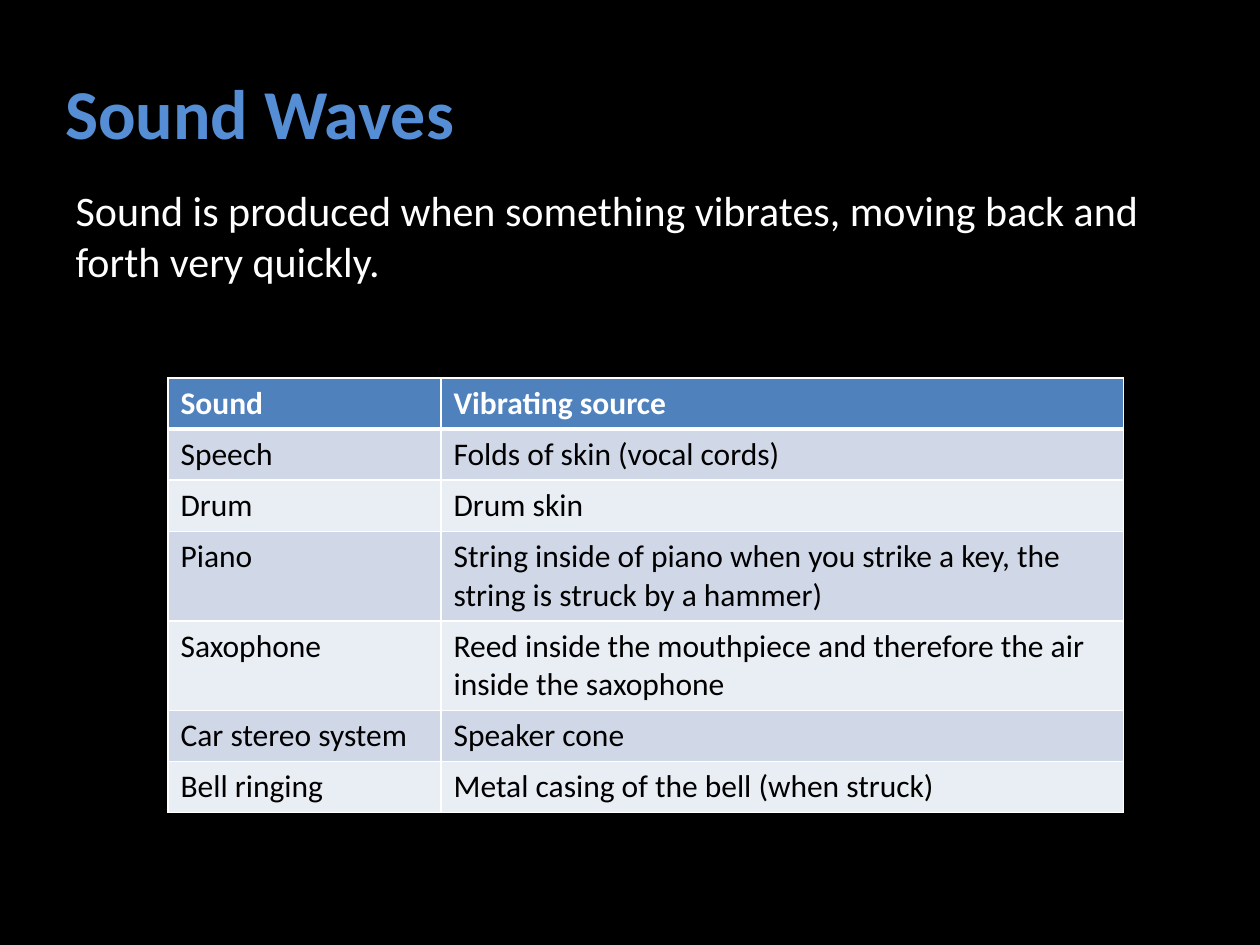
"""Build the slide on sound waves and their sources."""
import pptx
import pptx.dml.color
import pptx.enum.text
import pptx.oxml
import pptx.oxml.ns
import pptx.util

Pt = pptx.util.Pt
HUES = {"back": "000000", "title": "558ED5", "light": "FFFFFF", "dark": "000000",
        "head": "4F81BD", "odd": "D0D8E8", "even": "E9EDF4"}
ROWS = [
    ("Sound", "Vibrating source"),
    ("Speech", "Folds of skin (vocal cords)"),
    ("Drum", "Drum skin"),
    ("Piano", "String inside of piano when you strike a key, the string is struck by a hammer)"),
    ("Saxophone", "Reed inside the mouthpiece and therefore the air inside the saxophone"),
    ("Car stereo system", "Speaker cone"),
    ("Bell ringing", "Metal casing of the bell (when struck)"),
]


def tint(name):
    return pptx.dml.color.RGBColor.from_string(HUES[name])


def write(frame, text, size=18, hue="dark", bold=False, font="Calibri"):
    frame.text = text
    para = frame.paragraphs[0]
    para.alignment = pptx.enum.text.PP_ALIGN.LEFT
    para.space_before = Pt(0)
    face = para.runs[0].font
    face.name, face.size, face.bold = font, Pt(size), bold
    face.color.rgb = tint(hue)


class Deck:
    def __init__(self, width, height):
        self.show = pptx.Presentation()
        self.show.slide_width, self.show.slide_height = Pt(width), Pt(height)
        self.slide = self.show.slides.add_slide(self.show.slide_layouts[1])
        fill = self.slide.background.fill
        fill.solid()
        fill.fore_color.rgb = tint("back")

    def place(self, index, text, box, wrap=True, **style):
        shape = self.slide.placeholders[index]
        shape.left, shape.top, shape.width, shape.height = map(Pt, box)
        frame = shape.text_frame
        write(frame, text, **style)
        frame.word_wrap = wrap
        frame.auto_size = pptx.enum.text.MSO_AUTO_SIZE.NONE
        frame.vertical_anchor = pptx.enum.text.MSO_ANCHOR.TOP
        return frame

    def title(self, text, box):
        self.place(0, text, box, wrap=False, size=40, hue="title", bold=True)

    def body(self, text, box):
        frame = self.place(1, text, box, size=24, hue="light")
        props = frame.paragraphs[0]._p.get_or_add_pPr()
        props.set("marL", "0")
        props.set("indent", "0")
        pptx.oxml.ns.qn("a:buNone")
        props.append(pptx.oxml.parse_xml(f'<a:buNone {pptx.oxml.ns.nsdecls("a")}/>'))

    def edge(self, cell, sides):
        props = cell._tc.get_or_add_tcPr()
        for spot, (side, width) in enumerate(sides.items()):
            props.insert(spot, pptx.oxml.parse_xml(
                f'<a:{side} {pptx.oxml.ns.nsdecls("a")} w="{Pt(width)}"><a:solidFill>'
                f'<a:srgbClr val="{HUES["light"]}"/></a:solidFill></a:{side}>'))

    def table(self, rows, left, top, widths, height):
        grid = self.slide.shapes.add_table(
            len(rows), len(widths), Pt(left), Pt(top),
            Pt(sum(widths)), Pt(height * len(rows))).table
        for col, width in zip(grid.columns, widths):
            col.width = Pt(width)
        for r, row in enumerate(rows):
            head = r == 0
            hue = "head" if head else "odd" if r % 2 else "even"
            sides = {"lnL": 1, "lnR": 1, "lnT": 3 if r == 1 else 1, "lnB": 3 if head else 1}
            for c, text in enumerate(row):
                cell = grid.cell(r, c)
                write(cell.text_frame, text, hue="light" if head else "dark", bold=head)
                cell.fill.solid()
                cell.fill.fore_color.rgb = tint(hue)
                self.edge(cell, sides)


def main():
    deck = Deck(720, 540)
    deck.title("Sound Waves", (30, 36, 239, 55.7))
    deck.body("Sound is produced when something vibrates, moving back and forth very quickly.",
              (36, 102, 666, 65.4))
    deck.table(ROWS, 96, 216, (156, 390), 29.2)
    deck.show.save("out.pptx")


if __name__ == "__main__":
    main()
